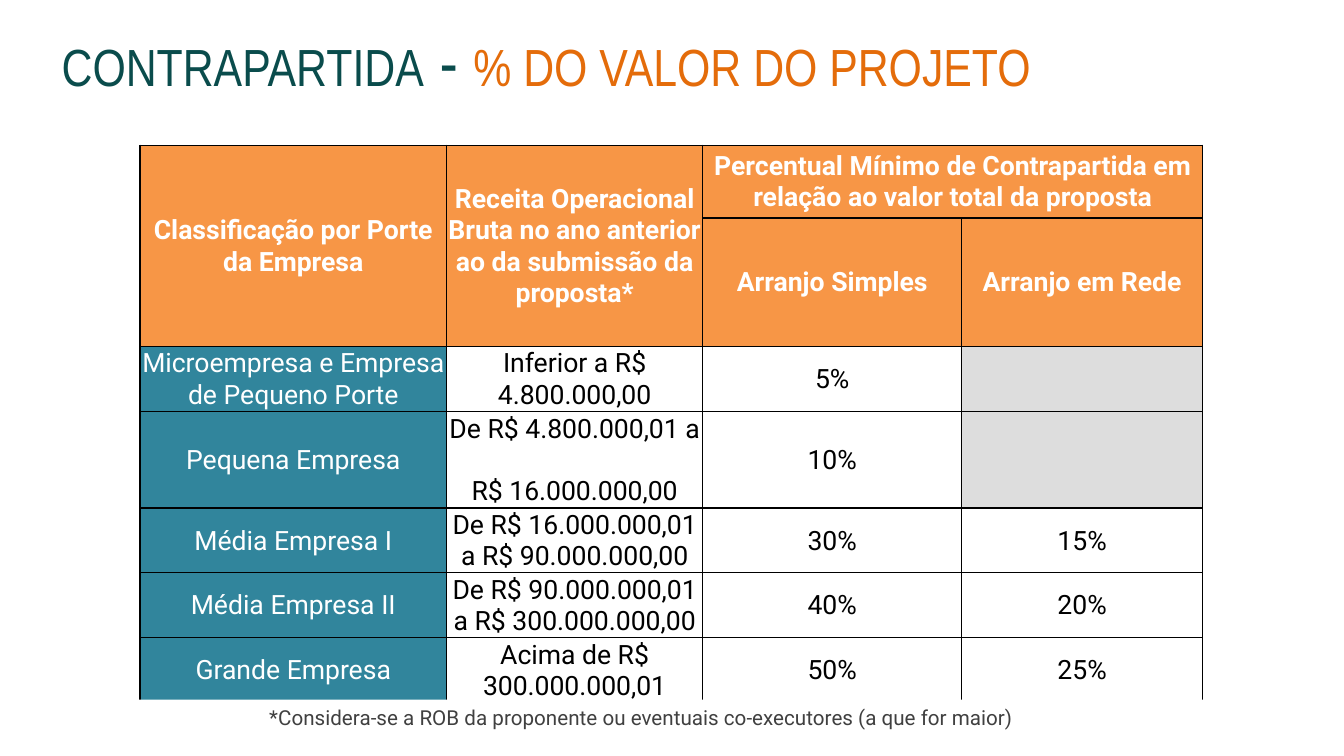
import pptx
import pptx.util
import pptx.dml.color
import pptx.enum.text
import pptx.enum.shapes
import pptx.oxml

Pt = pptx.util.Pt
Color = pptx.dml.color.RGBColor
Align = pptx.enum.text.PP_ALIGN
Anchor = pptx.enum.text.MSO_ANCHOR

DARK = Color(0x0A, 0x4C, 0x4C)
RUST = Color(0xE4, 0x6C, 0x0A)
ORANGE = Color(0xF7, 0x96, 0x46)
TEAL = Color(0x31, 0x85, 0x9C)
SILVER = Color(0xDD, 0xDD, 0xDD)
GRAY = Color(0x40, 0x40, 0x40)
WHITE = Color(0xFF, 0xFF, 0xFF)
BLACK = Color(0, 0, 0)

COLS = [219, 183, 185, 172]
ROWS = [52, 46] + [45.4] * 5
HEADS = [
    ["Classificação por Porte da Empresa",
     "Receita Operacional Bruta no ano anterior ao da submissão da proposta*",
     "Percentual Mínimo de Contrapartida em relação ao valor total da proposta", ""],
    ["", "", "Arranjo Simples", "Arranjo em Rede"],
]
SIZES = [
    ["Microempresa e Empresa de Pequeno Porte", "Inferior a R$ 4.800.000,00", "5%", ""],
    ["Pequena Empresa", "De R$ 4.800.000,01 a \vR$ 16.000.000,00", "10%", ""],
    ["Média Empresa I", "De R$ 16.000.000,01 a R$ 90.000.000,00", "30%", "15%"],
    ["Média Empresa II", "De R$ 90.000.000,01 a R$ 300.000.000,00", "40%", "20%"],
    ["Grande Empresa", "Acima de R$ 300.000.000,01", "50%", "25%"],
]


def style(para, size, color, bold=False):
    para.alignment = Align.CENTER
    font = para.font
    font.name, font.size, font.bold = "Roboto", Pt(size), bold
    font.color.rgb = color


def title(slide, left, top, width, height):
    frame = slide.shapes.add_textbox(Pt(left), Pt(top), Pt(width), Pt(height)).text_frame
    frame.word_wrap = True
    para = frame.paragraphs[0]
    para.font.name = "Arial Narrow"
    for text, size, color in [("CONTRAPARTIDA", 37.3, DARK), (" - ", 48, DARK),
                              ("% DO VALOR DO PROJETO", 37.3, RUST)]:
        run = para.add_run()
        run.text = text
        run.font.size = Pt(size)
        run.font.color.rgb = color


def border(cell):
    """Draw a thin black line on all four sides, placed before the fill."""
    props = cell._tc.get_or_add_tcPr()
    for spot, side in enumerate(("lnL", "lnR", "lnT", "lnB")):
        props.insert(spot, pptx.oxml.parse_xml(
            f'<a:{side} xmlns:a="http://schemas.openxmlformats.org/drawingml/2006/main" '
            f'w="{Pt(1)}"><a:solidFill><a:srgbClr val="{BLACK}"/></a:solidFill></a:{side}>'))


def fill(cell, text, back, color, bold):
    cell.margin_left = cell.margin_right = cell.margin_top = Pt(0.7)
    cell.margin_bottom = 0
    cell.vertical_anchor = Anchor.MIDDLE
    if back is None:
        cell.fill.background()
    else:
        cell.fill.solid()
        cell.fill.fore_color.rgb = back
    border(cell)
    if text:
        cell.text = text
    style(cell.text_frame.paragraphs[0], 19, color, bold)


def look(row, col, text):
    """Return the fill, text colour and weight of a cell."""
    if row < len(HEADS):
        return ORANGE, WHITE, True
    if col == 0:
        return TEAL, WHITE, False
    return (None if text else SILVER), BLACK, False


def grid(slide, left, top):
    table = slide.shapes.add_table(len(ROWS), len(COLS), Pt(left), Pt(top),
                                   Pt(sum(COLS)), Pt(sum(ROWS))).table
    for col, width in zip(table.columns, COLS):
        col.width = Pt(width)
    for row, height in zip(table.rows, ROWS):
        row.height = Pt(height)
    for r, texts in enumerate(HEADS + SIZES):
        for c, text in enumerate(texts):
            fill(table.cell(r, c), text, *look(r, c, text))
    for start, end in [((0, 0), (1, 0)), ((0, 1), (1, 1)), ((0, 2), (0, 3))]:
        table.cell(*start).merge(table.cell(*end))


def note(slide, left, top, width, height):
    box = slide.shapes.add_shape(pptx.enum.shapes.MSO_SHAPE.RECTANGLE,
                                 Pt(left), Pt(top), Pt(width), Pt(height))
    box.shadow.inherit = False
    box.fill.solid()
    box.fill.fore_color.rgb = WHITE
    box.line.fill.background()
    frame = box.text_frame
    frame.word_wrap = True
    frame.vertical_anchor = Anchor.MIDDLE
    para = frame.paragraphs[0]
    para.text = "*Considera-se a ROB da proponente ou eventuais co-executores (a que for maior)"
    style(para, 14.7, GRAY)


def main():
    deck = pptx.Presentation()
    deck.slide_width, deck.slide_height = Pt(960), Pt(540)
    slide = deck.slides.add_slide(deck.slide_layouts[6])
    title(slide, 37, 10, 844, 65.5)
    grid(slide, 100, 103.7)
    note(slide, 39.6, 499.7, 836.6, 25.2)
    deck.save("out.pptx")


if __name__ == "__main__":
    main()
